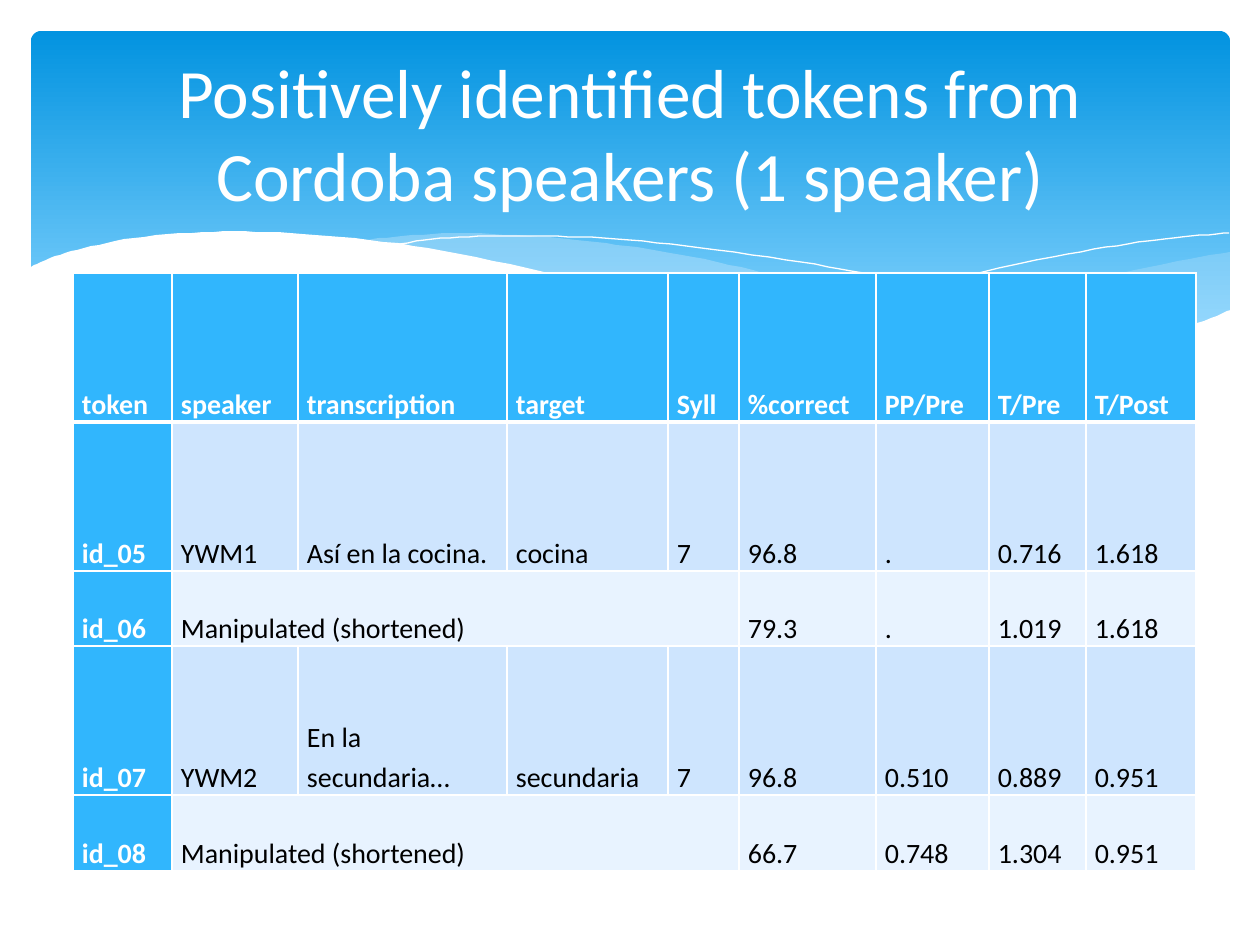
import lxml.etree
import pptx
import pptx.dml.color
import pptx.enum.shapes
import pptx.enum.text
import pptx.oxml.ns
import pptx.util

SCALE = 914400 / 126
FONT = "Calibri"
WHITE, BLACK = "FFFFFF", "000000"
HEAD, ODD, EVEN = "31B6FD", "CEE5FE", "E8F3FF"
MIST = "C6E7FC"

RIGHT = [
    [(1199, 221), (1147, 230), (1054, 250), (951, 274), (888, 288), (802, 303)],
    [(802, 303), (875, 312), (938, 318), (995, 319), (1056, 316), (1119, 305),
     (1165, 293), (1199, 280)],
]
MIDDLE = [
    [(1094, 313), (1024, 303), (946, 289), (859, 271), (762, 249), (686, 231),
     (617, 218), (555, 210), (498, 205), (424, 202), (363, 206), (329, 210)],
    [(329, 210), (400, 220), (478, 235), (535, 249), (637, 271), (726, 290),
     (807, 304), (879, 314), (943, 318), (1000, 319), (1049, 318), (1094, 313)],
]
CREST = [
    [(358, 215), (402, 208), (457, 205), (515, 205), (585, 208), (670, 217),
     (770, 231), (845, 245), (927, 263), (1016, 285), (1112, 312)],
]
SWELL = [
    [(741, 293), (816, 273), (911, 250), (1022, 226), (1097, 213), (1151, 206),
     (1198, 202)],
]
FOAM = [
    [(1200, 279), (1166, 292), (1116, 305), (1056, 314), (988, 318), (906, 314),
     (811, 303), (699, 284), (603, 263), (496, 237), (397, 217), (310, 206),
     (235, 201), (172, 201), (103, 207), (53, 217), (19, 227), (-2, 237)],
    [(-2, 384), (1200, 384)],
]

COLS = [99, 126, 209, 161, 71, 137, 113, 97, 110]
ROWS = [149, 149, 75, 149, 76]
NOTE = "Manipulated (shortened)"
DATA = [
    ["token", "speaker", "transcription", "target", "Syll", "%correct", "PP/Pre",
     "T/Pre", "T/Post"],
    ["id_05", "YWM1", "Así en la cocina.", "cocina", "7", "96.8", ".", "0.716", "1.618"],
    ["id_06", NOTE, None, None, None, "79.3", ".", "1.019", "1.618"],
    ["id_07", "YWM2", "En la secundaria…", "secundaria", "7", "96.8", "0.510", "0.889",
     "0.951"],
    ["id_08", NOTE, None, None, None, "66.7", "0.748", "1.304", "0.951"],
]


def px(num):
    """Turn px into EMU."""
    return pptx.util.Emu(round(num * SCALE))


def tint(code):
    """Turn a hex string into a colour."""
    return pptx.dml.color.RGBColor.from_string(code)


def write(para, text, size, code, bold=False):
    """Add one run of text to a paragraph."""
    run = para.add_run()
    run.text = text
    run.font.name = FONT
    run.font.size = pptx.util.Pt(size)
    run.font.bold = bold
    run.font.color.rgb = tint(code)


def bend(knots, steps=6):
    """Sample a smooth curve that passes through the knots."""
    ends = [knots[0], *knots, knots[-1]]
    dots = [knots[0]]
    for a, b, c, d in zip(ends, ends[1:], ends[2:], ends[3:]):
        for step in range(1, steps + 1):
            t = step / steps
            dots.append(tuple(
                (2 * q + (r - p) * t + (2 * p - 5 * q + 4 * r - s) * t ** 2
                 + (3 * q - p - 3 * r + s) * t ** 3) / 2
                for p, q, r, s in zip(a, b, c, d)))
    return dots


def wave(slide, box, parts, code, alpha=100, solid=True):
    """Draw a filled wave or a thin wave line inside the box."""
    dots = [dot for part in parts for dot in bend(part)]
    pen = slide.shapes.build_freeform(*dots[0], scale=SCALE)
    pen.add_line_segments(dots[1:], close=solid)
    shape = pen.convert_to_shape(px(box[0]), px(box[1]))
    shape.shadow.inherit = False
    if not solid:
        shape.fill.background()
        shape.line.color.rgb = tint(code)
        shape.line.width = pptx.util.Pt(0)
        return
    shape.line.fill.background()
    shape.fill.solid()
    shape.fill.fore_color.rgb = tint(code)
    if alpha < 100:
        tone = next(shape.element.iter(pptx.oxml.ns.qn("a:srgbClr")))
        lxml.etree.SubElement(tone, pptx.oxml.ns.qn("a:alpha"), val=str(alpha * 1000))


def banner(slide, box):
    """Draw the blue gradient panel and its waves."""
    kind = pptx.enum.shapes.MSO_SHAPE.ROUNDED_RECTANGLE
    panel = slide.shapes.add_shape(kind, *map(px, box))
    panel.adjustments[0] = 0.03
    panel.shadow.inherit = False
    panel.line.fill.background()
    panel.fill.gradient()
    panel.fill.gradient_angle = 270
    for stop, (pos, code) in zip(panel.fill.gradient_stops, [(0, "0293E0"), (0.9, "83D3FE")]):
        stop.position = pos
        stop.color.rgb = tint(code)
    wave(slide, box, RIGHT, MIST, 29)
    wave(slide, box, MIDDLE, MIST, 40)
    wave(slide, box, CREST, WHITE, solid=False)
    wave(slide, box, SWELL, WHITE, solid=False)
    wave(slide, box, FOAM, WHITE)


def edge(cell, side, width):
    """Give one side of a cell a white line."""
    qn = pptx.oxml.ns.qn
    props = cell._tc.get_or_add_tcPr()
    line = lxml.etree.SubElement(props, qn("a:ln" + side), w=str(pptx.util.Pt(width)))
    fill = lxml.etree.SubElement(line, qn("a:solidFill"))
    lxml.etree.SubElement(fill, qn("a:srgbClr"), val=WHITE)


def fill_cell(cell, text, row, col):
    """Style one cell by its place and write its text."""
    lead = row == 0 or col == 0
    thick = {(0, "B"), (1, "T")}
    for side in "LRTB":
        edge(cell, side, 3 if (row, side) in thick else 1)
    cell.fill.solid()
    cell.fill.fore_color.rgb = tint(HEAD if lead else ODD if row % 2 else EVEN)
    cell.vertical_anchor = pptx.enum.text.MSO_ANCHOR.BOTTOM
    cell.margin_left = cell.margin_right = px(9)
    cell.margin_top = cell.margin_bottom = 0
    if text:
        para = cell.text_frame.paragraphs[0]
        para.line_spacing = 1.15
        para.space_after = pptx.util.Pt(10)
        write(para, text, 16, WHITE if lead else BLACK, lead)


def grid(slide, box):
    """Place the table of tokens."""
    table = slide.shapes.add_table(len(ROWS), len(COLS), *map(px, box)).table
    table.first_col = True
    for col, width in zip(table.columns, COLS):
        col.width = px(width)
    for row, height in zip(table.rows, ROWS):
        row.height = px(height)
    for i, line in enumerate(DATA):
        for j, text in enumerate(line):
            fill_cell(table.cell(i, j), text, i, j)
        if None in line:
            table.cell(i, 1).merge(table.cell(i, 4))


def title(slide, box):
    """Place the centred title."""
    frame = slide.shapes.add_textbox(*map(px, box)).text_frame
    frame.word_wrap = True
    frame.vertical_anchor = pptx.enum.text.MSO_ANCHOR.MIDDLE
    para = frame.paragraphs[0]
    para.alignment = pptx.enum.text.PP_ALIGN.CENTER
    write(para, "Positively identified tokens from Cordoba speakers (1 speaker)", 39.6, WHITE)


def main():
    """Build the slide and save it."""
    deck = pptx.Presentation()
    deck.slide_width, deck.slide_height = px(1260), px(945)
    slide = deck.slides.add_slide(deck.slide_layouts[6])
    banner(slide, (31, 31, 1199, 340))
    grid(slide, (73, 273, sum(COLS), sum(ROWS)))
    title(slide, (63, 46, 1134, 173))
    deck.save("out.pptx")


if __name__ == "__main__":
    main()
